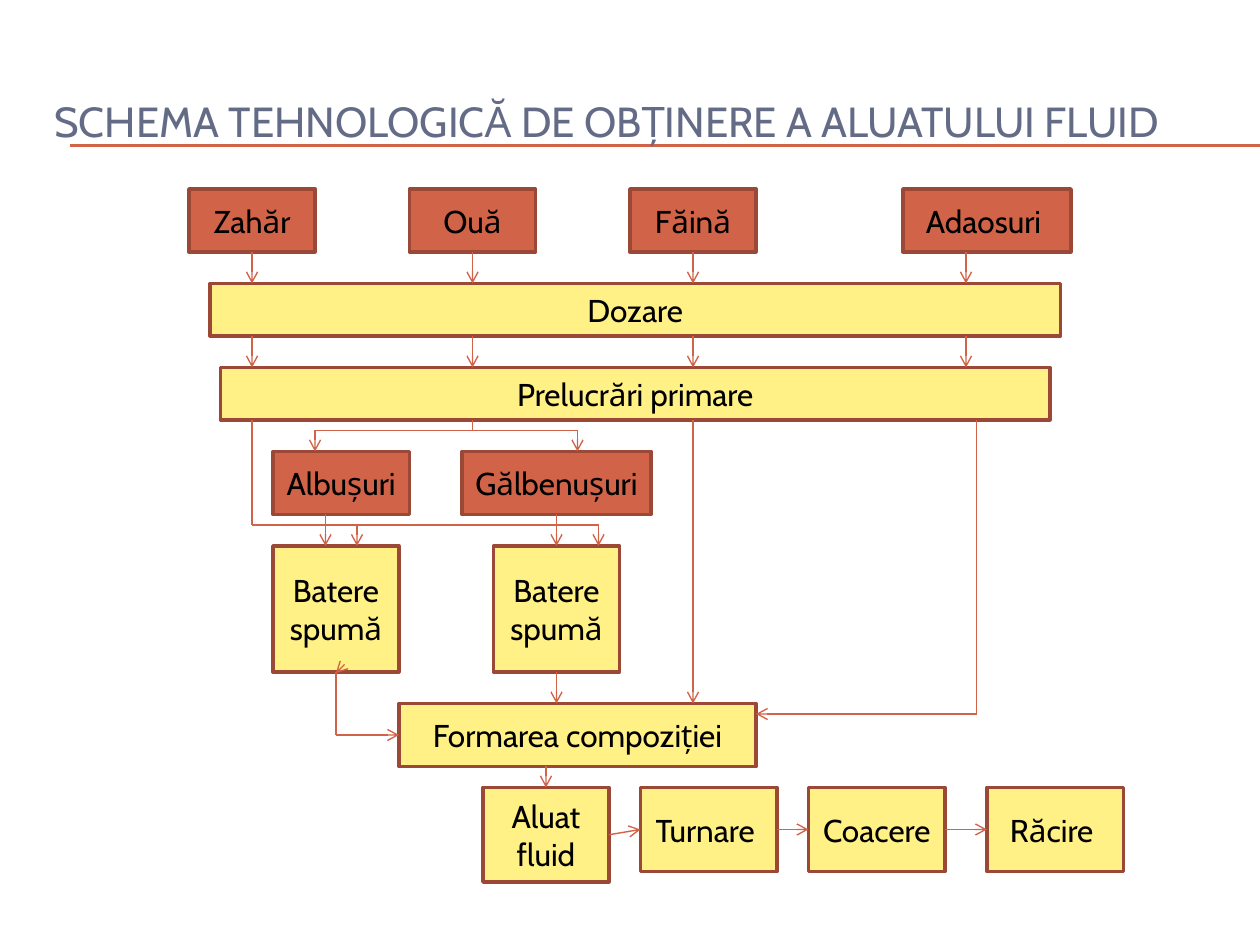
from lxml import etree
from pptx import Presentation, util as u
from pptx.dml.color import RGBColor
from pptx.enum import shapes, text
from pptx.oxml.ns import qn

PX = 7620  # EMU per px, 120 px to the inch
FONT = "Cabin"
COLOURS = {"title": "646B86", "ingredient": "D16349", "step": "FFF185",
           "border": "9B4936", "flow": "D16349", "label": "000000"}

prs = Presentation()
prs.slide_width, prs.slide_height = 1200 * PX, 900 * PX
slide = prs.slides.add_slide(prs.slide_layouts[6])
side_middles = {}  # (x, y) -> (box, connection site)


def write(shape, words, size, colour, align):
    frame = shape.text_frame
    frame.word_wrap = True
    frame.vertical_anchor = text.MSO_ANCHOR.MIDDLE
    frame.text = words
    paragraph = frame.paragraphs[0]
    paragraph.alignment = align
    font = paragraph.runs[0].font
    font.name, font.size = FONT, u.Pt(size)
    font.color.rgb = RGBColor.from_string(COLOURS[colour])


def draw_line(x1, y1, x2, y2, arrow=False, width=0.79):
    """Draw a line, joined to any box whose side middle it touches."""
    line = slide.shapes.add_connector(
        shapes.MSO_CONNECTOR.STRAIGHT, x1 * PX, y1 * PX, x2 * PX, y2 * PX)
    if (x1, y1) in side_middles:
        line.begin_connect(*side_middles[x1, y1])
    if (x2, y2) in side_middles:
        line.end_connect(*side_middles[x2, y2])
    line.line.width = u.Pt(width)
    line.line.color.rgb = RGBColor.from_string(COLOURS["flow"])
    if arrow:
        etree.SubElement(line.line._get_or_add_ln(), qn("a:tailEnd"), type="arrow")
    etree.SubElement(line._element.spPr, qn("a:effectLst"))


# Title and its double rule
for rule_y in (138, 139):
    draw_line(67, rule_y, 1200, rule_y, width=0.75)
title = slide.shapes.add_textbox(40 * PX, 60 * PX, 1140 * PX, 110 * PX)
write(title, "SCHEMA TEHNOLOGICĂ DE OBȚINERE A ALUATULUI FLUID", 24, "title",
      text.PP_ALIGN.LEFT)

# Ingredients and process steps
boxes = [
    ("Zahăr", "ingredient", 180, 180, 120, 60),
    ("Ouă", "ingredient", 390, 180, 120, 60),
    ("Făină", "ingredient", 600, 180, 120, 60),
    ("Adaosuri ", "ingredient", 860, 180, 160, 60),
    ("Dozare", "step", 200, 270, 810, 50),
    ("Prelucrări primare", "step", 210, 350, 790, 50),
    ("Albușuri", "ingredient", 260, 430, 130, 60),
    ("Gălbenușuri", "ingredient", 440, 430, 180, 60),
    ("Batere spumă", "step", 260, 520, 120, 120),
    ("Batere spumă", "step", 470, 520, 120, 120),
    ("Formarea compoziției", "step", 380, 670, 340, 60),
    ("Aluat fluid", "step", 460, 750, 120, 90),
    ("Turnare ", "step", 610, 750, 130, 80),
    ("Coacere ", "step", 770, 750, 130, 80),
    ("Răcire ", "step", 940, 750, 130, 80),
]
for words, role, x, y, w, h in boxes:
    box = slide.shapes.add_shape(
        shapes.MSO_SHAPE.RECTANGLE, x * PX, y * PX, w * PX, h * PX)
    box.shadow.inherit = False
    box.fill.solid()
    box.fill.fore_color.rgb = RGBColor.from_string(COLOURS[role])
    box.line.color.rgb = RGBColor.from_string(COLOURS["border"])
    box.line.width = u.Pt(2)
    write(box, words, 18, "label", text.PP_ALIGN.CENTER)
    middles = [(x + w // 2, y), (x, y + h // 2), (x + w // 2, y + h), (x + w, y + h // 2)]
    for site, middle in enumerate(middles):
        side_middles[middle] = (box, site)

# Ingredients through dosing to primary processing
for top, bottom in ((240, 270), (320, 350)):
    for x in (240, 450, 660, 920):
        draw_line(x, top, x, bottom, arrow=True)

# Eggs split into whites and yolks
draw_line(450, 400, 450, 410)
draw_line(300, 410, 550, 410)
for x in (300, 550):
    draw_line(x, 410, x, 430, arrow=True)

# Whites, yolks and sugar into the foams
for x in (310, 530):
    draw_line(x, 490, x, 520, arrow=True)
draw_line(240, 400, 240, 500)
draw_line(240, 500, 570, 500)
for x in (340, 570):
    draw_line(x, 500, x, 520, arrow=True)

# Foams, flour and additions into the composition
draw_line(321, 640, 320, 641, arrow=True)
draw_line(320, 640, 320, 700)
draw_line(320, 700, 380, 700, arrow=True)
draw_line(530, 640, 530, 670, arrow=True)
draw_line(660, 400, 660, 670, arrow=True)
draw_line(930, 400, 930, 680)
draw_line(930, 680, 720, 680, arrow=True)

# Composition to the cooled product
draw_line(520, 730, 520, 750, arrow=True)
for x1, y1, x2 in ((580, 795, 610), (740, 790, 770), (900, 790, 940)):
    draw_line(x1, y1, x2, 790, arrow=True)

prs.save("out.pptx")
